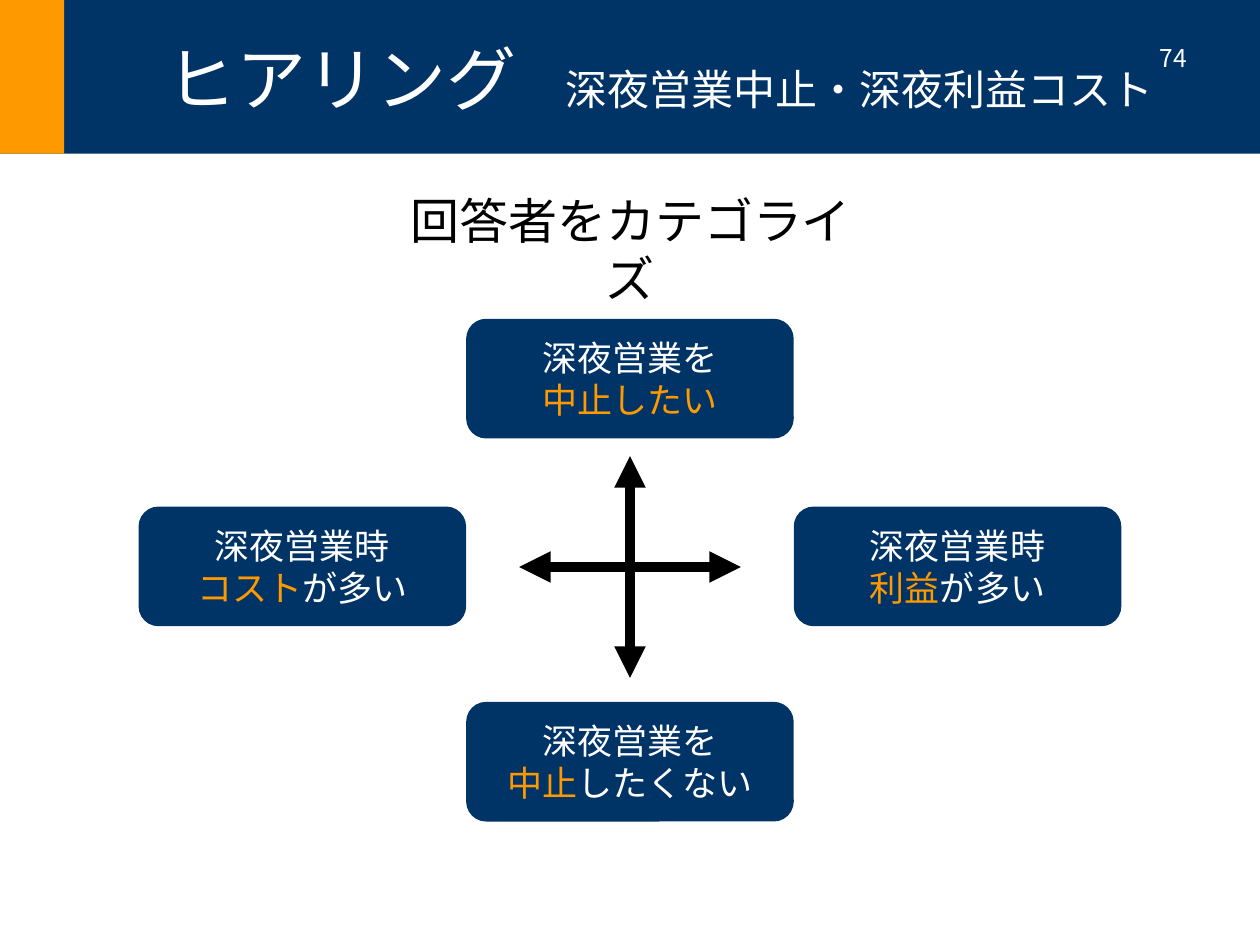
from lxml import etree
from pptx import Presentation
from pptx.dml.color import RGBColor
from pptx.enum.shapes import MSO_CONNECTOR, MSO_SHAPE
from pptx.enum.text import MSO_ANCHOR, MSO_AUTO_SIZE, PP_ALIGN
from pptx.oxml.ns import qn
from pptx.util import Inches, Pt

CENTER, RIGHT = PP_ALIGN.CENTER, PP_ALIGN.RIGHT
TOP, MIDDLE = MSO_ANCHOR.TOP, MSO_ANCHOR.MIDDLE
RECTANGLE, ROUNDED = MSO_SHAPE.RECTANGLE, MSO_SHAPE.ROUNDED_RECTANGLE
STRAIGHT = MSO_CONNECTOR.STRAIGHT
FONT = "Noto Sans CJK JP"
COLORS = {"navy": "003366", "orange": "FF9900", "white": "FFFFFF", "black": "000000"}

# Content: each paragraph is a list of (text, size, color) runs
TITLE = [[("ヒアリング", 40, "white"), ("\u3000", 28, "white"),
          ("深夜営業中止・深夜利益コスト", 24, "white")]]
SUBTITLE = [[("回答者をカテゴライズ", 28, "black")]]
PAGE_NUMBER = [[("74", 14, "white")]]

# Category boxes: column, top, first line, highlighted words, remaining words
CATEGORIES = [
    (0, 2.53, "深夜営業を", "中止したい", ""),
    (0, 5.57, "深夜営業を", "中止", "したくない"),
    (1, 4.02, "深夜営業時", "利益", "が多い"),
    (-1, 4.02, "深夜営業時", "コスト", "が多い"),
]
BOX_WIDTH, BOX_HEIGHT, BOX_SIZE = 2.6, 0.95, 20
CENTER_X, CENTER_Y, ARROW_REACH = 5, 4.5, 0.88
HEADER_BANDS = [(10, "navy"), (0.51, "orange")]
HEADER_HEIGHT = 1.22


def color(name):
    return RGBColor.from_string(COLORS[name])


def write_text(shape, paragraphs, alignment=CENTER, anchor=TOP):
    frame = shape.text_frame
    settings = {"word_wrap": True, "auto_size": MSO_AUTO_SIZE.NONE, "vertical_anchor": anchor}
    for name, value in settings.items():
        setattr(frame, name, value)
    for index, runs in enumerate(paragraphs):
        paragraph = frame.add_paragraph() if index else frame.paragraphs[0]
        paragraph.alignment = alignment
        for text, size, color_name in runs:
            run = paragraph.add_run()
            run.text = text
            run.font.color.rgb = color(color_name)
            for name, value in {"size": Pt(size), "name": FONT}.items():
                setattr(run.font, name, value)
            # East Asian typeface
            etree.SubElement(run.font._element, qn("a:ea"), typeface=FONT)


def add_block(slide, kind, left, top, width, height, fill):
    shape = slide.shapes.add_shape(kind, *map(Inches, (left, top, width, height)))
    shape.shadow.inherit = False
    shape.fill.solid()
    shape.fill.fore_color.rgb = color(fill)
    shape.line.fill.background()
    return shape


def add_text(slide, place, paragraphs, alignment=CENTER):
    write_text(slide.shapes.add_textbox(*map(Inches, place)), paragraphs, alignment)


def add_double_arrow(slide, reach_x, reach_y):
    ends = (CENTER_X - reach_x, CENTER_Y - reach_y, CENTER_X + reach_x, CENTER_Y + reach_y)
    arrow = slide.shapes.add_connector(STRAIGHT, *map(Inches, ends))
    arrow.line.color.rgb = color("black")
    arrow.line.width = Pt(6)
    line = arrow.line._get_or_add_ln()
    for end in ("a:headEnd", "a:tailEnd"):
        etree.SubElement(line, qn(end), type="triangle")
    etree.SubElement(arrow._element.spPr, qn("a:effectLst"))


def main():
    presentation = Presentation()
    presentation.slide_width, presentation.slide_height = Inches(10), Inches(7.5)
    slide = presentation.slides.add_slide(presentation.slide_layouts[5])

    # Header bands, with the title brought in front of them
    for width, fill in HEADER_BANDS:
        add_block(slide, RECTANGLE, 0, 0, width, HEADER_HEIGHT, fill)
    title = slide.shapes.title
    title_place = {"left": 0.48, "top": -0.01, "width": 9.52, "height": 1.25}
    for name, value in title_place.items():
        setattr(title, name, Inches(value))
    write_text(title, TITLE, anchor=MIDDLE)
    slide.shapes._spTree.append(title._element)
    add_text(slide, (7.19, 0.29, 2.33, 0.52), PAGE_NUMBER, RIGHT)

    # Subtitle and crossing axes
    add_text(slide, (3.12, 1.46, 3.76, 0.57), SUBTITLE)
    add_double_arrow(slide, 0, ARROW_REACH)
    add_double_arrow(slide, ARROW_REACH, 0)

    # Categories at the ends of the axes
    for column, top, first_line, highlight, rest in CATEGORIES:
        left = CENTER_X + (column - 0.5) * BOX_WIDTH
        box = add_block(slide, ROUNDED, left, top, BOX_WIDTH, BOX_HEIGHT, "navy")
        second_line = [(highlight, BOX_SIZE, "orange")]
        if rest:
            second_line.append((rest, BOX_SIZE, "white"))
        write_text(box, [[(first_line, BOX_SIZE, "white")], second_line], anchor=MIDDLE)

    presentation.save("out.pptx")


if __name__ == "__main__":
    main()
